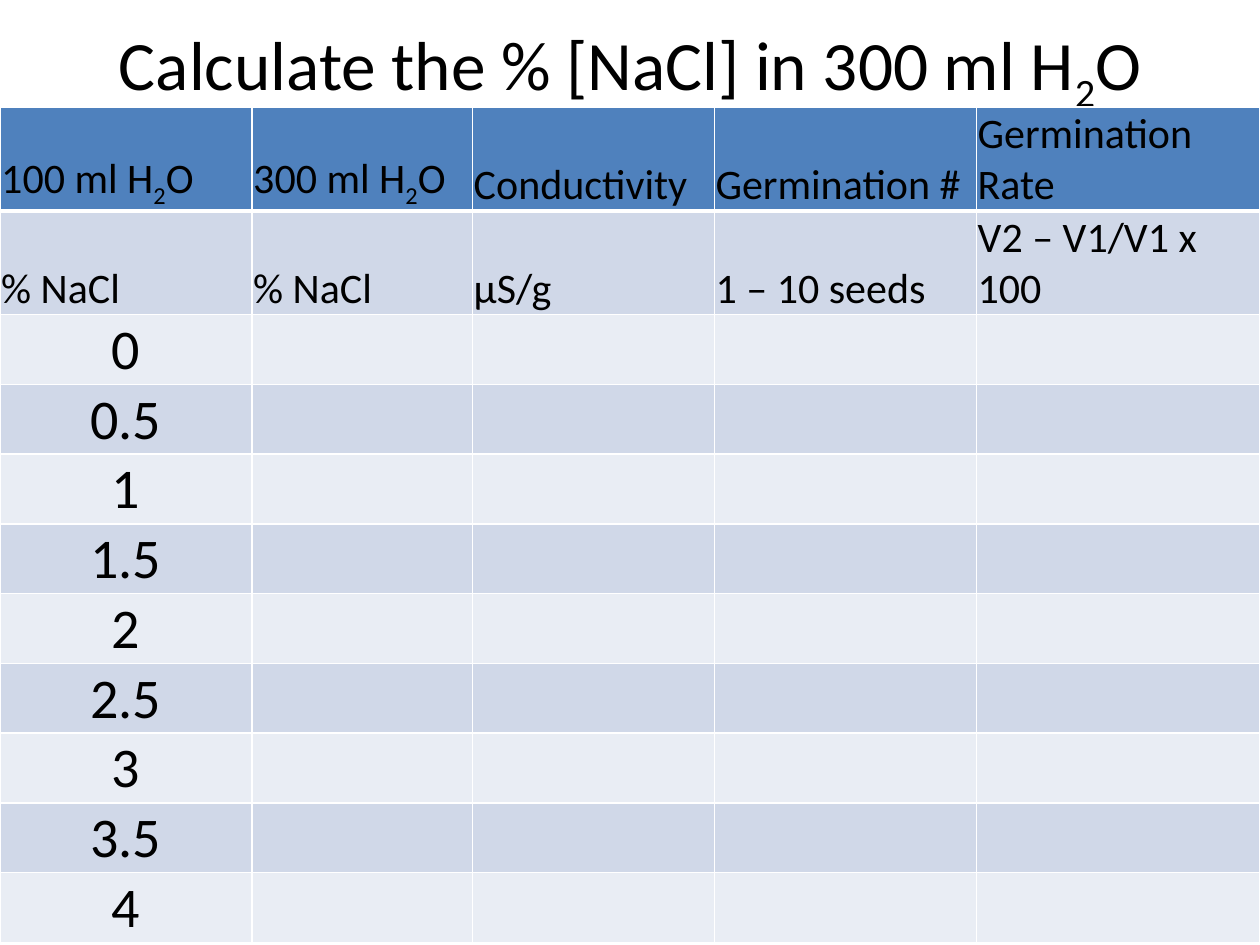
from dataclasses import dataclass

import pptx
import pptx.dml.color
import pptx.enum.text
import pptx.oxml
import pptx.oxml.ns
import pptx.util
from pptx.util import Inches

ALIGN = pptx.enum.text.PP_ALIGN
ANCHOR = pptx.enum.text.MSO_ANCHOR


@dataclass(frozen=True)
class Theme:
    font: str = "Calibri"
    text: str = "000000"
    header: str = "4F81BD"
    band_dark: str = "D0D8E8"
    band_light: str = "E9EDF4"
    border: str = "FFFFFF"
    title_size: float = 39.6
    label_size: float = 24
    value_size: float = 32
    border_width: float = 1
    header_rule: float = 3


THEME = Theme()
WATER = [("H", False), ("2", True), ("O", False)]
COLUMN_WIDTHS = [2, 1.75, 1.92, 2.08, 2.25]
HEADINGS = ["100 ml H2O", "300 ml H2O", "Conductivity", "Germination #", "Germination Rate"]
UNITS = ["% NaCl", "% NaCl", "µS/g", "1 – 10 seeds", "V2 – V1/V1 x 100"]
CONCENTRATIONS = [f"{step / 2:g}" for step in range(9)]


def write_text(paragraph, text, size, align):
    """Write text run by run, setting the 2 of H2O as a subscript."""
    paragraph.alignment = align
    before, water, after = text.partition("H2O")
    pieces = [(before + "H", False), ("2", True), ("O" + after, False)] if water else [(text, False)]
    for piece, subscript in pieces:
        run = paragraph.add_run()
        run.text = piece
        run.font.name = THEME.font
        run.font.size = pptx.util.Pt(size)
        run.font.bold = False
        run.font.color.rgb = pptx.dml.color.RGBColor.from_string(THEME.text)
        if subscript:
            run.font._element.set("baseline", "-25000")


def set_borders(cell, top, bottom):
    properties = cell._tc.get_or_add_tcPr()
    sides = {"lnL": THEME.border_width, "lnR": THEME.border_width, "lnT": top, "lnB": bottom}
    for position, (side, width) in enumerate(sides.items()):
        line = pptx.oxml.parse_xml(
            f'<a:{side} {pptx.oxml.ns.nsdecls("a")} w="{pptx.util.Pt(width)}">'
            f'<a:solidFill><a:srgbClr val="{THEME.border}"/></a:solidFill></a:{side}>'
        )
        properties.insert(position, line)


def row_fill(row):
    if row == 0:
        return THEME.header
    return THEME.band_dark if row % 2 else THEME.band_light


def add_title(slide, left, top, width, height):
    title = slide.shapes.title
    title.left, title.top, title.width, title.height = left, top, width, height
    title.text_frame.word_wrap = True
    title.text_frame.vertical_anchor = ANCHOR.MIDDLE
    write_text(title.text_frame.paragraphs[0], "Calculate the % [NaCl] in 300 ml H2O",
               THEME.title_size, ALIGN.CENTER)


def add_results_table(slide, left, top, width, height):
    rows = [HEADINGS, UNITS] + [[value, "", "", "", ""] for value in CONCENTRATIONS]
    frame = slide.shapes.add_table(len(rows), len(COLUMN_WIDTHS), left, top, width, height)
    table = frame.table
    for column, column_width in zip(table.columns, COLUMN_WIDTHS):
        column.width = Inches(column_width)
    for row_index, texts in enumerate(rows):
        table.rows[row_index].height = Inches(0.49)
        is_label = row_index < 2
        size = THEME.label_size if is_label else THEME.value_size
        align = ALIGN.LEFT if is_label else ALIGN.CENTER
        above = THEME.header_rule if row_index == 1 else THEME.border_width
        below = THEME.header_rule if row_index == 0 else THEME.border_width
        for column_index, text in enumerate(texts):
            cell = table.cell(row_index, column_index)
            cell.fill.solid()
            cell.fill.fore_color.rgb = pptx.dml.color.RGBColor.from_string(row_fill(row_index))
            set_borders(cell, above, below)
            if text:
                cell.margin_left = cell.margin_right = cell.margin_top = Inches(0.01)
                cell.margin_bottom = 0
                cell.vertical_anchor = ANCHOR.BOTTOM
                write_text(cell.text_frame.paragraphs[0], text, size, align)
    frame.height = height


def main():
    deck = pptx.Presentation()
    deck.slide_width, deck.slide_height = Inches(10), Inches(7.5)
    slide = deck.slides.add_slide(deck.slide_layouts[5])
    add_title(slide, Inches(0.5), Inches(0), Inches(9), Inches(1.08))
    add_results_table(slide, Inches(0), Inches(0.85), Inches(10), Inches(6.51))
    deck.save("out.pptx")


if __name__ == "__main__":
    main()
